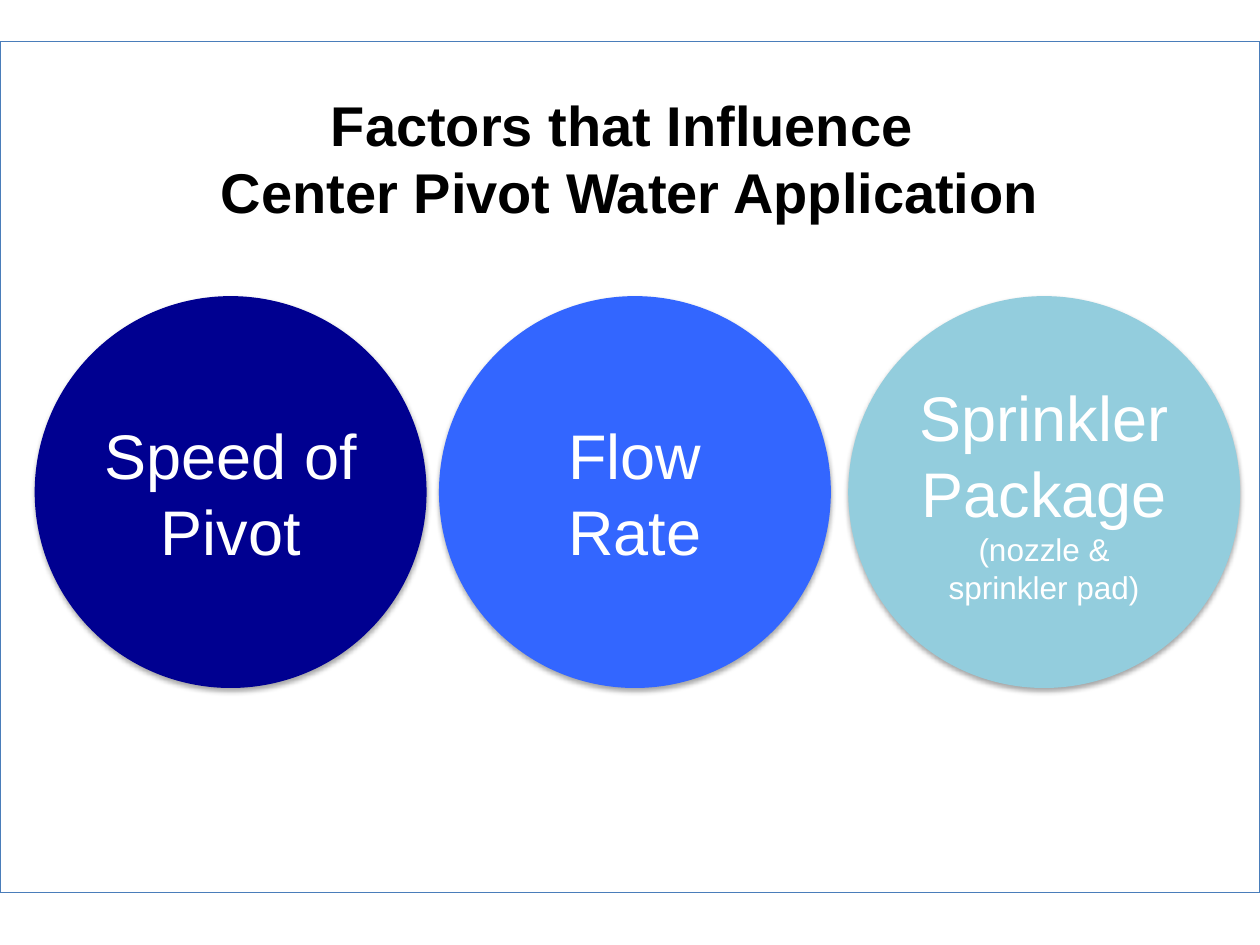
"""Build the slide on factors that influence center pivot water application."""
from lxml import etree
from pptx import Presentation
from pptx.dml.color import RGBColor
from pptx.enum.shapes import MSO_SHAPE as Shape
from pptx.enum.text import MSO_ANCHOR as Anchor, PP_ALIGN as Align
from pptx.oxml import parse_xml
from pptx.util import Cm, Pt

SHADOW = """
<a:effectLst xmlns:a="http://schemas.openxmlformats.org/drawingml/2006/main">
  <a:outerShdw blurRad="40000" dist="23000" dir="5400000" rotWithShape="0">
    <a:srgbClr val="000000"><a:alpha val="35000"/></a:srgbClr>
  </a:outerShdw>
</a:effectLst>"""


def color(value):
    return RGBColor.from_string(value)


def format_paragraph(paragraph, size, font_color, bold=False):
    paragraph.alignment = Align.CENTER
    font = paragraph.font
    font.name, font.size, font.bold = "Arial", Pt(size), bold
    font.color.rgb = color(font_color)


presentation = Presentation()
presentation.slide_width, presentation.slide_height = Cm(25.4), Cm(19.05)
slide = presentation.slides.add_slide(presentation.slide_layouts[5])

title = slide.shapes.title
title.left, title.top, title.width, title.height = Cm(0), Cm(1.57), Cm(25.4), Cm(4.55)
title_frame = title.text_frame
title_frame.text = "Factors that Influence \vCenter Pivot Water Application"
title_frame.vertical_anchor = Anchor.TOP
title_frame.margin_left = title_frame.margin_right = Cm(0.25)
title_frame.margin_top = title_frame.margin_bottom = Cm(0.25)
format_paragraph(title_frame.paragraphs[0], 32, "000000", bold=True)

border = slide.shapes.add_shape(Shape.RECTANGLE, Cm(0), Cm(0.84), Cm(25.4), Cm(17.15))
border.shadow.inherit = False
border.fill.solid()
border.fill.fore_color.rgb = color("FFFFFF")
border.line.color.rgb = color("4A7DBA")
border.line.width = Pt(0.75)
title.element.addprevious(border.element)

factors = [
    (0.7, "000090", "Speed of Pivot", ""),
    (8.85, "3366FF", "Flow Rate", ""),
    (17.1, "93CDDD", "Sprinkler Package ", "(nozzle & sprinkler pad)"),
]
for left, fill_color, name, detail in factors:
    circle = slide.shapes.add_shape(Shape.OVAL, Cm(left), Cm(5.97), Cm(7.9), Cm(7.9))
    circle.fill.solid()
    circle.fill.fore_color.rgb = color(fill_color)
    circle.line.fill.background()
    circle.element.spPr.append(parse_xml(SHADOW))
    circle.text_frame.word_wrap = True
    circle.text_frame.vertical_anchor = Anchor.MIDDLE
    paragraph = circle.text_frame.paragraphs[0]
    paragraph.add_run().text = name
    format_paragraph(paragraph, 36, "FFFFFF")
    if detail:
        detail_run = paragraph.add_run()
        detail_run.text = detail
        detail_run.font.size = Pt(18)

presentation.save("out.pptx")
